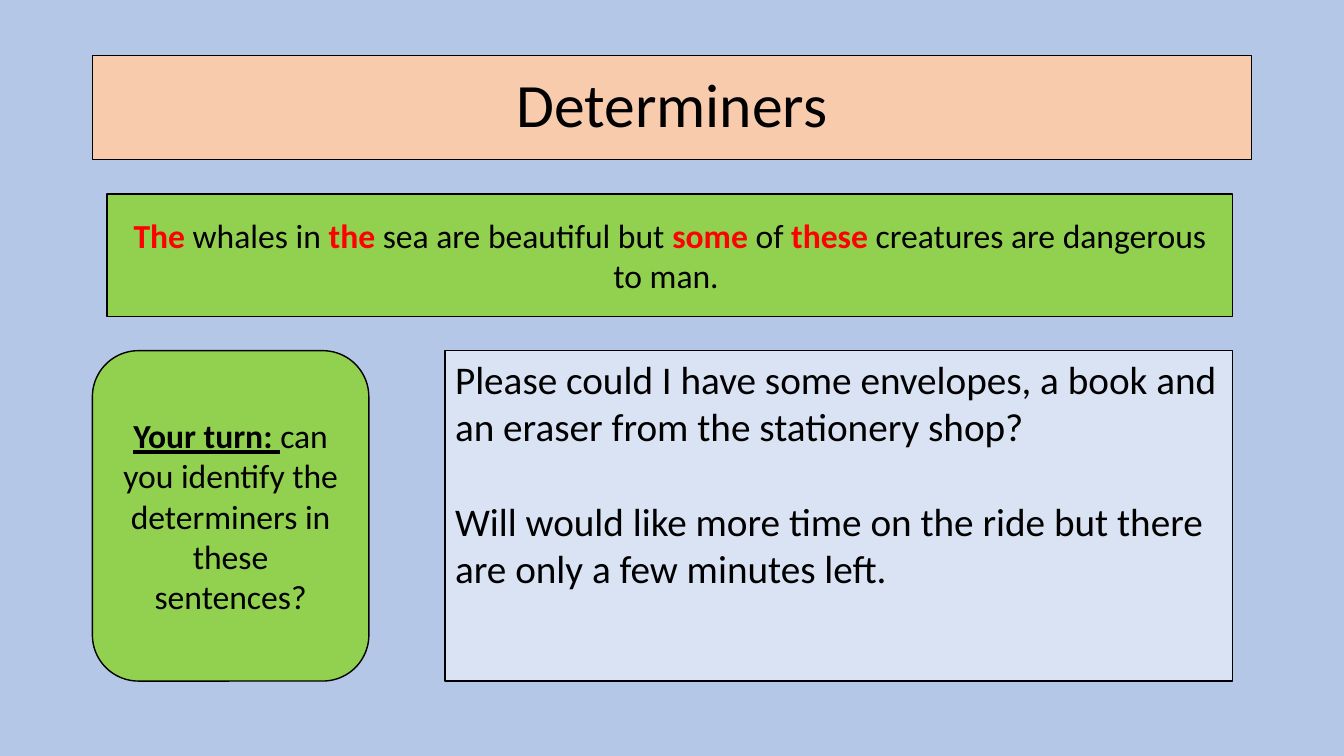
from pptx import Presentation
from pptx.dml.color import RGBColor
from pptx.enum import shapes, text
from pptx.util import Pt

COLOURS = {
    "background": "B4C7E7",
    "title": "F8CBAD",
    "green": "92D050",
    "sentences": "DAE3F3",
    "ink": "000000",
    "determiner": "FF0000",
}
SHAPE = shapes.MSO_SHAPE
ALIGN = text.PP_ALIGN
ANCHOR = text.MSO_ANCHOR


def colour(name):
    return RGBColor.from_string(COLOURS[name])


def add_panel(slide, box, fill, outline=1, kind=SHAPE.RECTANGLE, anchor=ANCHOR.MIDDLE):
    panel = slide.shapes.add_shape(kind, *(Pt(length) for length in box))
    panel.shadow.inherit = False
    panel.fill.solid()
    panel.fill.fore_color.rgb = colour(fill)
    panel.line.color.rgb = colour("ink")
    panel.line.width = Pt(outline)
    panel.text_frame.word_wrap = True
    panel.text_frame.vertical_anchor = anchor
    return panel.text_frame


def write(paragraph, words, size=24, ink="ink", bold=False, underline=False, align=ALIGN.CENTER):
    paragraph.alignment = align
    run = paragraph.add_run()
    run.text = words
    run.font.name = "Calibri"
    run.font.size = Pt(size)
    run.font.bold = bold
    run.font.underline = underline
    run.font.color.rgb = colour(ink)


def add_title(slide, box):
    heading = add_panel(slide, box, "title", outline=0.75).paragraphs[0]
    heading.line_spacing = 0.9
    write(heading, "Determiners", size=44)


def add_example(slide, box):
    example = add_panel(slide, box, "green").paragraphs[0]
    for determiner, rest in (
        ("The", " whales in "),
        ("the", " sea are beautiful but "),
        ("some", " of "),
        ("these ", "creatures are dangerous to man. "),
    ):
        write(example, determiner, ink="determiner", bold=True)
        write(example, rest)


def add_task(slide, box):
    task = add_panel(slide, box, "green", kind=SHAPE.ROUNDED_RECTANGLE).paragraphs[0]
    write(task, "Your turn: ", bold=True, underline=True)
    write(task, "can you identify the determiners in these sentences?")


def add_sentences(slide, box):
    frame = add_panel(slide, box, "sentences", anchor=ANCHOR.TOP)
    request, ride = frame.paragraphs[0], frame.add_paragraph()
    write(request, "Please could I have some envelopes, a book and an eraser from the stationery shop?",
          size=28, align=ALIGN.LEFT)
    write(ride, "Will would like more time on the ride but there are only a few minutes left.",
          size=28, align=ALIGN.LEFT)
    ride.space_before = Pt(34)


def main():
    deck = Presentation()
    deck.slide_width, deck.slide_height = Pt(960), Pt(540)
    slide = deck.slides.add_slide(deck.slide_layouts[6])
    slide.background.fill.solid()
    slide.background.fill.fore_color.rgb = colour("background")
    add_title(slide, (66, 39.5, 828, 74.5))
    add_example(slide, (76.5, 138.5, 804, 87.5))
    add_task(slide, (66, 250.5, 197.5, 236))
    add_sentences(slide, (318, 250.5, 562.5, 236))
    deck.save("out.pptx")


if __name__ == "__main__":
    main()
